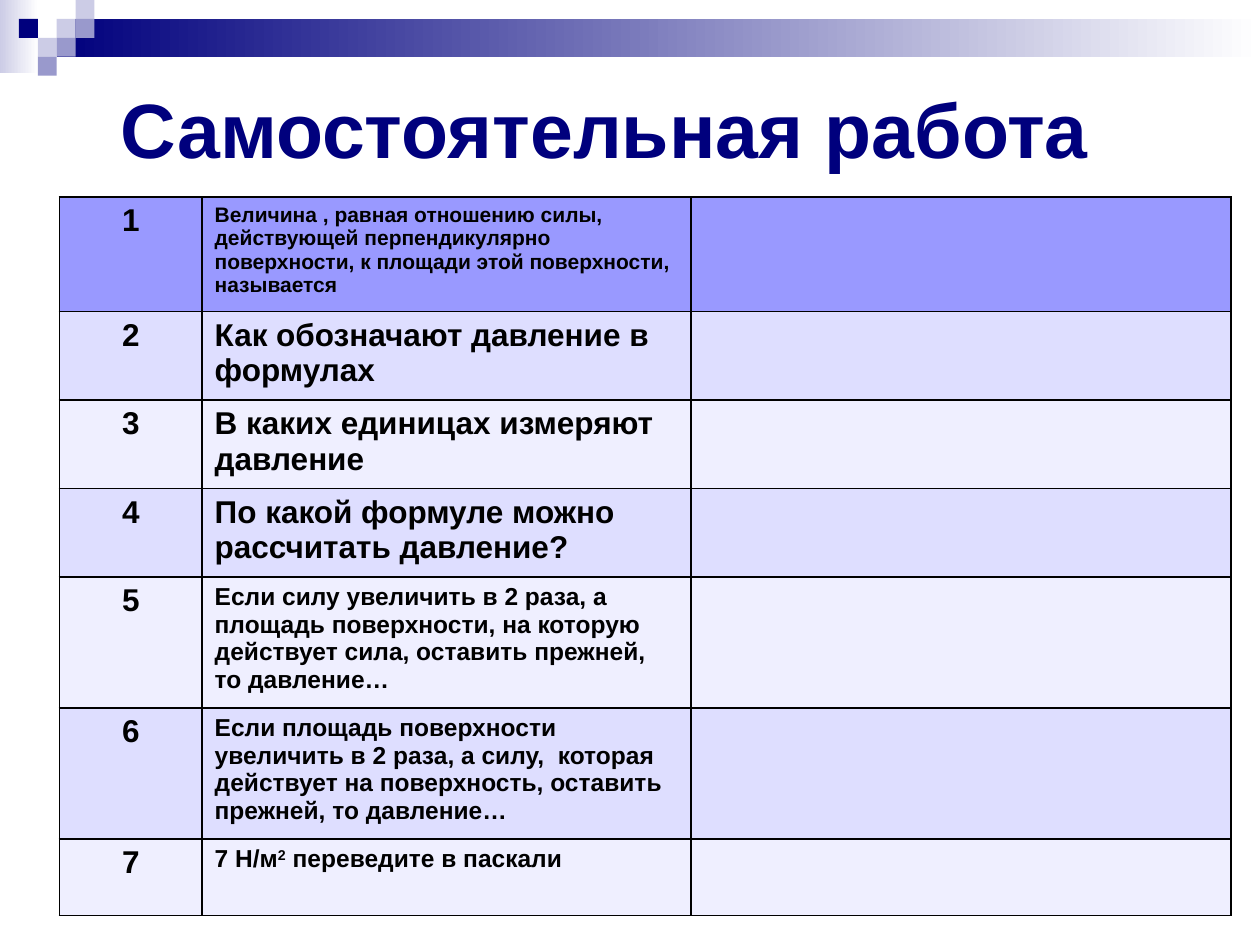
from dataclasses import dataclass

from lxml.etree import SubElement
from pptx import Presentation
from pptx.dml.color import RGBColor
from pptx.enum.shapes import MSO_SHAPE
from pptx.enum.text import MSO_ANCHOR, PP_ALIGN
from pptx.oxml.ns import qn
from pptx.util import Pt


@dataclass(frozen=True)
class Theme:
    """Colours and type sizes of the slide."""
    font: str = "Arial"
    navy: str = "00007D"
    lilac: str = "CCCCE6"
    violet: str = "9999CC"
    white: str = "FFFFFF"
    black: str = "000000"
    header: str = "9999FF"
    bands: tuple = ("EFEFFF", "DEDEFF")
    title_size: int = 44
    number_size: int = 18


THEME = Theme()
SQUARE = 10.8
COLUMN_WIDTHS = (81.5, 279.5, 308.5)
ROWS = (
    (65.5, 12, "Величина , равная отношению силы, действующей перпендикулярно "
               "поверхности, к площади этой поверхности, называется"),
    (50.6, 18, "Как обозначают давление в формулах"),
    (50.6, 18, "В каких единицах измеряют давление"),
    (50.6, 18, "По какой формуле можно рассчитать давление?"),
    (74.8, 14, "Если силу увеличить в 2 раза, а площадь поверхности, на которую "
               "действует сила, оставить прежней, то давление…"),
    (74.8, 14, "Если площадь поверхности увеличить в 2 раза, а силу,  которая "
               "действует на поверхность, оставить прежней, то давление…"),
    (43.9, 14, "7 Н/м^2^ переведите в паскали"),
)


def color(value):
    """Turn a hex string into a colour."""
    return RGBColor.from_string(value)


def add_rectangle(slide, left, top, width, height, *colors):
    """Add a borderless rectangle, solid or fading left to right."""
    shape = slide.shapes.add_shape(
        MSO_SHAPE.RECTANGLE, Pt(left), Pt(top), Pt(width), Pt(height))
    shape.shadow.inherit = False
    shape.line.fill.background()
    if len(colors) == 1:
        shape.fill.solid()
        shape.fill.fore_color.rgb = color(colors[0])
        return
    shape.fill.gradient()
    shape.fill.gradient_angle = 0
    for stop, value in zip(shape.fill.gradient_stops, colors):
        stop.color.rgb = color(value)


def add_banner(slide):
    """Add the gradient strips and the mosaic of small squares."""
    add_rectangle(slide, 0, 0, 22, 42, THEME.lilac, THEME.white)
    add_rectangle(slide, 3 * SQUARE, SQUARE, 720 - 3 * SQUARE, 2 * SQUARE,
                  THEME.navy, THEME.white)
    squares = {
        THEME.lilac: ((3, 1), (4, 0), (2, 2)),
        THEME.violet: ((4, 1), (3, 2), (2, 3)),
        THEME.navy: ((1, 1),),
    }
    for value, places in squares.items():
        for column, row in places:
            add_rectangle(slide, column * SQUARE, row * SQUARE, SQUARE, SQUARE, value)


def write_text(frame, text, size, value, alignment=PP_ALIGN.LEFT):
    """Write one bold paragraph, raising the parts between carets."""
    paragraph = frame.paragraphs[0]
    paragraph.alignment = alignment
    for index, part in enumerate(text.split("^")):
        run = paragraph.add_run()
        run.text = part
        if index % 2:
            run._r.get_or_add_rPr().set("baseline", "30000")
    font = paragraph.font
    font.name, font.size, font.bold = THEME.font, Pt(size), True
    font.color.rgb = color(value)


def add_title(slide, text):
    """Add the slide heading."""
    box = slide.shapes.add_textbox(Pt(62), Pt(50.4), Pt(622), Pt(44.6))
    box.text_frame.word_wrap = True
    box.text_frame.vertical_anchor = MSO_ANCHOR.MIDDLE
    write_text(box.text_frame, text, THEME.title_size, THEME.navy)


def style_cell(cell, value):
    """Give a cell thin black borders and a solid fill."""
    properties = cell._tc.get_or_add_tcPr()
    for side in ("lnL", "lnR", "lnT", "lnB"):
        line = SubElement(properties, qn(f"a:{side}"), w=str(Pt(1)))
        fill = SubElement(line, qn("a:solidFill"))
        SubElement(fill, qn("a:srgbClr"), val=THEME.black)
    cell.fill.solid()
    cell.fill.fore_color.rgb = color(value)


def add_question_table(slide):
    """Add the numbered questions with an empty answer column."""
    table = slide.shapes.add_table(
        len(ROWS), len(COLUMN_WIDTHS), Pt(34), Pt(112.5),
        Pt(sum(COLUMN_WIDTHS)), Pt(sum(row[0] for row in ROWS))).table
    for column, width in zip(table.columns, COLUMN_WIDTHS):
        column.width = Pt(width)
    for index, (height, size, question) in enumerate(ROWS):
        table.rows[index].height = Pt(height)
        number_cell, question_cell, answer_cell = table.rows[index].cells
        band = THEME.bands[index % 2] if index else THEME.header
        for cell in (number_cell, question_cell, answer_cell):
            style_cell(cell, band)
        write_text(number_cell.text_frame, str(index + 1), THEME.number_size,
                   THEME.black, PP_ALIGN.CENTER)
        write_text(question_cell.text_frame, question, size, THEME.black)


def main():
    """Build and save the slide."""
    presentation = Presentation()
    presentation.slide_width, presentation.slide_height = Pt(720), Pt(540)
    slide = presentation.slides.add_slide(presentation.slide_layouts[6])
    add_banner(slide)
    add_title(slide, "Самостоятельная работа")
    add_question_table(slide)
    presentation.save("out.pptx")


if __name__ == "__main__":
    main()
